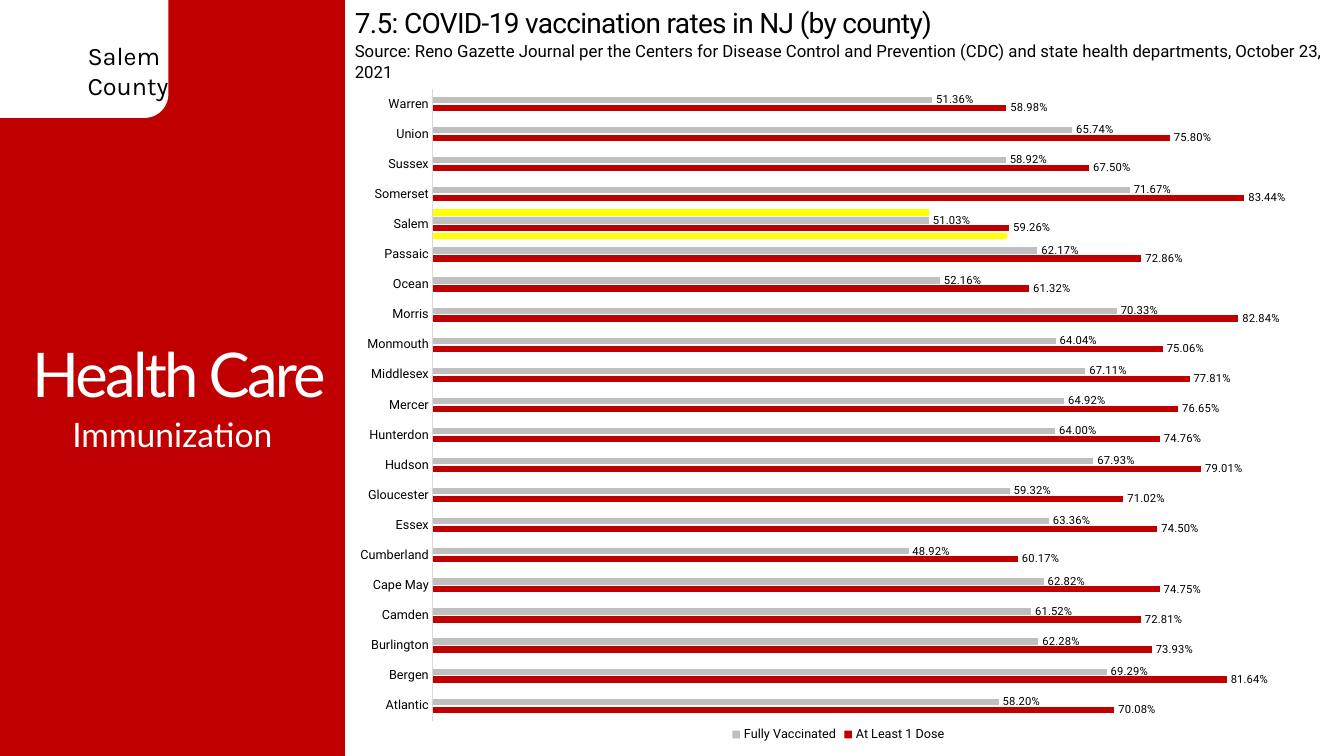
import pptx
import pptx.chart.data
import pptx.dml.color
import pptx.enum.chart
import pptx.enum.shapes
import pptx.enum.text
import pptx.oxml
import pptx.oxml.ns
import pptx.util
from dataclasses import dataclass

# Content
COUNTY_LINES = ["Salem", "County"]
SECTION, TOPIC = "Health Care", "Immunization"
HEADING = "7.5: COVID-19 vaccination rates in NJ (by county)"
SOURCE = ("Source: Reno Gazette Journal per the Centers for Disease Control and "
          "Prevention (CDC) and state health departments, October 23, 2021")
HIGHLIGHTED = "Salem"
RATES = [  # county, at least 1 dose, fully vaccinated
    ("Atlantic", 0.7008, 0.5820), ("Bergen", 0.8164, 0.6929),
    ("Burlington", 0.7393, 0.6228), ("Camden", 0.7281, 0.6152),
    ("Cape May", 0.7475, 0.6282), ("Cumberland", 0.6017, 0.4892),
    ("Essex", 0.7450, 0.6336), ("Gloucester", 0.7102, 0.5932),
    ("Hudson", 0.7901, 0.6793), ("Hunterdon", 0.7476, 0.6400),
    ("Mercer", 0.7665, 0.6492), ("Middlesex", 0.7781, 0.6711),
    ("Monmouth", 0.7506, 0.6404), ("Morris", 0.8284, 0.7033),
    ("Ocean", 0.6132, 0.5216), ("Passaic", 0.7286, 0.6217),
    ("Salem", 0.5926, 0.5103), ("Somerset", 0.8344, 0.7167),
    ("Sussex", 0.6750, 0.5892), ("Union", 0.7580, 0.6574),
    ("Warren", 0.5898, 0.5136),
]


@dataclass(frozen=True)
class Theme:
    red: str = "C00000"
    grey: str = "BFBFBF"
    axis: str = "D9D9D9"
    yellow: str = "FFFF00"
    black: str = "000000"
    white: str = "FFFFFF"
    body: str = "Roboto"
    display: str = "Lato"
    badge: str = "Karla"
    section_size: int = 44
    topic_size: int = 24
    heading_size: int = 20
    badge_size: int = 18
    source_size: int = 12
    axis_size: int = 9
    label_size: int = 8


theme = Theme()
WIDTH, HEIGHT = 13.33, 7.5
SIDEBAR = 3.42
MAIN = WIDTH - SIDEBAR


def rgb(code):
    return pptx.dml.color.RGBColor.from_string(code)


def inches(*lengths):
    return [pptx.util.Inches(length) for length in lengths]


def style(font, face, size, color):
    font.name, font.size, font.bold = face, pptx.util.Pt(size), False
    font.color.rgb = rgb(color)


def write(box, text, face, size, color, align="LEFT", anchor="TOP", tracking=0):
    frame = box.text_frame
    frame.word_wrap = True
    frame.auto_size = pptx.enum.text.MSO_AUTO_SIZE.NONE
    frame.vertical_anchor = getattr(pptx.enum.text.MSO_ANCHOR, anchor)
    frame.text = text
    for paragraph in frame.paragraphs:
        paragraph.alignment = getattr(pptx.enum.text.PP_ALIGN, align)
        for run in paragraph.runs:
            style(run.font, face, size, color)
            if tracking:
                run.font._element.set("spc", str(int(tracking * 100)))
    return frame


def add_text(slide, at, *args, **options):
    return write(slide.shapes.add_textbox(*inches(*at)), *args, **options)


def add_block(slide, kind, at, color):
    block = slide.shapes.add_shape(kind, *inches(*at))
    block.shadow.inherit = False
    block.fill.solid()
    block.fill.fore_color.rgb = rgb(color)
    block.line.fill.background()


def add_sidebar(slide):
    kinds = pptx.enum.shapes.MSO_SHAPE
    add_block(slide, kinds.RECTANGLE, (0, 0, SIDEBAR, HEIGHT), theme.red)
    add_block(slide, kinds.ROUNDED_RECTANGLE, (-0.33, -0.25, 2, 1.42), theme.white)
    add_text(slide, (0.77, 0.35, 1, 0.71), "\n".join(COUNTY_LINES),
             theme.badge, theme.badge_size, theme.black)
    section = add_text(slide, (0, 0.75, 3.55, 6), SECTION, theme.display,
                       theme.section_size, theme.white, "CENTER", "MIDDLE", -2)
    section.paragraphs[0].line_spacing = 0.9
    add_text(slide, (0, 4.06, SIDEBAR, 0.5), TOPIC, theme.display,
             theme.topic_size, theme.white, "CENTER")


def add_heading(slide):
    heading = slide.shapes.title
    heading.left, heading.top, heading.width, heading.height = inches(
        SIDEBAR, 0, MAIN, 0.44)
    write(heading, HEADING, theme.body, theme.heading_size, theme.black, tracking=-0.5)
    add_text(slide, (SIDEBAR, 0.36, MAIN, 0.3), SOURCE, theme.body,
             theme.source_size, theme.black)


def add_rates_chart(slide):
    counties, one_dose, full = zip(*RATES)

    def marker(values):
        return [round(value, 2) if county == HIGHLIGHTED else None
                for county, value in zip(counties, values)]

    # Highlight bars sit on both sides of the two real series
    series_rows = [
        ("Series 1", marker(one_dose), theme.yellow, False),
        ("At Least 1 Dose", one_dose, theme.red, True),
        ("Fully Vaccinated", full, theme.grey, True),
        ("Series 4", marker(full), theme.yellow, False),
    ]
    data = pptx.chart.data.CategoryChartData(number_format="0.00%")
    data.categories = counties
    for name, values, _, _ in series_rows:
        data.add_series(name, values)

    enums = pptx.enum.chart
    chart = slide.shapes.add_chart(
        enums.XL_CHART_TYPE.BAR_CLUSTERED,
        *inches(SIDEBAR, 0.87, 9.79, 6.53), data).chart
    chart.has_title = False
    style(chart.font, "Calibri", 10, theme.black)
    bars = chart.plots[0]
    bars.gap_width, bars.overlap, bars.vary_by_categories = 0, -26, False

    # Series colours and labels
    for series, (_, _, color, labelled) in zip(bars.series, series_rows):
        series.format.fill.solid()
        series.format.fill.fore_color.rgb = rgb(color)
        series.invert_if_negative = False
        if labelled:
            labels = series.data_labels
            labels.show_value = True
            labels.number_format, labels.number_format_is_linked = "0.00%", False
            labels.position = enums.XL_LABEL_POSITION.OUTSIDE_END
            style(labels.font, theme.body, theme.label_size, theme.black)

    # Axes
    county_axis, rate_axis = chart.category_axis, chart.value_axis
    county_axis.major_tick_mark = enums.XL_TICK_MARK.NONE
    county_axis.format.line.color.rgb = rgb(theme.axis)
    county_axis.format.line.width = pptx.util.Pt(0.75)
    style(county_axis.tick_labels.font, theme.body, theme.axis_size, theme.black)
    rate_axis.minimum_scale, rate_axis.maximum_scale = 0, 0.9
    rate_axis.has_major_gridlines = False
    rate_axis.visible = False

    # Legend without the highlight bars
    chart.has_legend = True
    legend = chart.legend
    legend.position = enums.XL_LEGEND_POSITION.BOTTOM
    legend.include_in_layout = False
    style(legend.font, theme.body, theme.axis_size, theme.black)
    namespace = pptx.oxml.ns.nsdecls("c")
    legend_position = legend._element.find(pptx.oxml.ns.qn("c:legendPos"))
    hidden = [i for i, row in enumerate(series_rows) if not row[3]]
    for index in reversed(hidden):
        legend_position.addnext(pptx.oxml.parse_xml(
            f'<c:legendEntry {namespace}><c:idx val="{index}"/>'
            '<c:delete val="1"/></c:legendEntry>'))

    # Inner plot area as shares of the chart
    area = chart._chartSpace.chart.plotArea
    for layout in area.findall(pptx.oxml.ns.qn("c:layout")):
        area.remove(layout)
    shares = "".join(f'<c:{key} val="{share}"/>' for key, share in
                     [("x", 0.089), ("y", 0.002), ("w", 0.887), ("h", 0.96)])
    area.insert(0, pptx.oxml.parse_xml(
        f'<c:layout {namespace}><c:manualLayout><c:layoutTarget val="inner"/>'
        '<c:xMode val="edge"/><c:yMode val="edge"/>'
        f'{shares}</c:manualLayout></c:layout>'))


def main():
    deck = pptx.Presentation()
    deck.slide_width, deck.slide_height = inches(WIDTH, HEIGHT)
    slide = deck.slides.add_slide(deck.slide_layouts.get_by_name("Title Only"))
    add_sidebar(slide)
    add_heading(slide)
    add_rates_chart(slide)
    deck.save("out.pptx")


if __name__ == "__main__":
    main()
